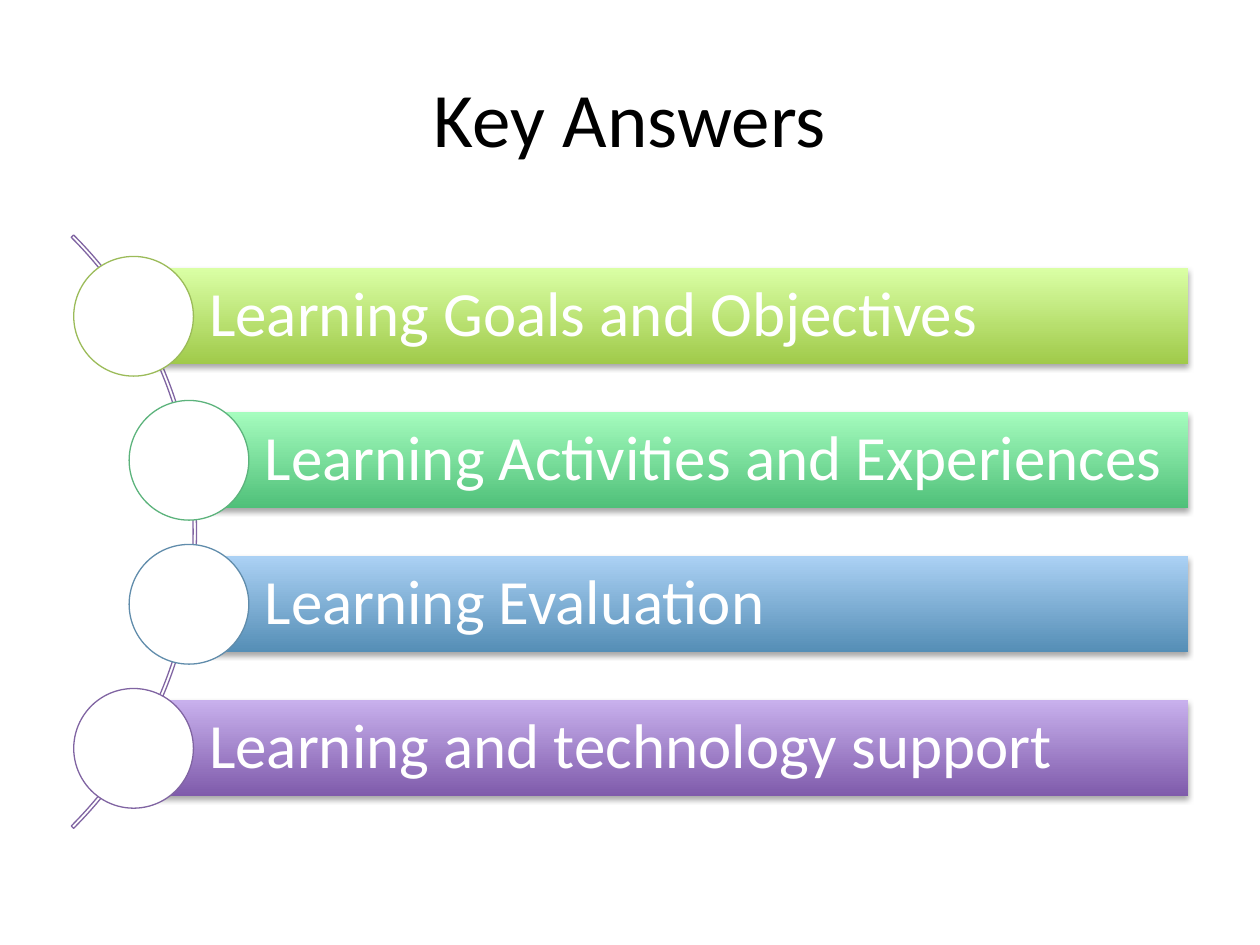
from lxml.etree import SubElement
from pptx import Presentation
from pptx.dml.color import RGBColor
from pptx.enum.shapes import MSO_SHAPE as Shape
from pptx.enum.text import MSO_ANCHOR as Anchor, PP_ALIGN as Align
from pptx.oxml.ns import qn
from pptx.util import Inches, Pt

ANSWERS = [
    ("Learning Goals and Objectives", 1.06, "A0CA4A", "DAFFA5", "9BBB59"),
    ("Learning Activities and Experiences", 1.5, "4FC079", "A5FCBE", "5CB37C"),
    ("Learning Evaluation", 1.5, "558EB6", "ABD1F4", "608CAB"),
    ("Learning and technology support", 1.06, "7F5BAB", "C8B0ED", "8064A2"),
]
FIRST_CENTER, ROW_STEP = 2.51, 1.143
BAR_RIGHT, BAR_HEIGHT = 9.43, 0.76
DOT_SIZE = 0.95
ARC_SIZE = 6.66
BAR_FRAME = {
    "word_wrap": True,
    "vertical_anchor": Anchor.MIDDLE,
    "margin_left": Inches(0.6),
    "margin_right": Inches(0.1),
    "margin_top": Inches(0.1),
    "margin_bottom": Inches(0.1),
}
TITLE_FRAME = {"word_wrap": True, "vertical_anchor": Anchor.MIDDLE}
SHADOW = {"blurRad": Pt(3.1), "dist": Pt(1.8), "dir": 90 * 60000, "rotWithShape": 0}


def color(hex_value):
    return RGBColor.from_string(hex_value)


def apply(target, values):
    for name, value in values.items():
        setattr(target, name, value)


def write(frame, text, size, ink, frame_format, paragraph_format):
    apply(frame, frame_format)
    paragraph = frame.paragraphs[0]
    apply(paragraph, paragraph_format)
    run = paragraph.add_run()
    run.text = text
    apply(run.font, {"name": "Calibri", "size": Pt(size)})
    run.font.color.rgb = color(ink)


def add_preset(slide, preset, left, top, width, height):
    preset_shape = slide.shapes.add_shape(
        preset, Inches(left), Inches(top), Inches(width), Inches(height))
    preset_shape.shadow.inherit = False
    return preset_shape


def outline(target, hex_value):
    target.line.color.rgb = color(hex_value)
    target.line.width = Pt(0.75)


def drop_shadow(target):
    effects = target._element.spPr.find(qn("a:effectLst"))
    shadow = SubElement(effects, qn("a:outerShdw"),
                        {name: str(int(value)) for name, value in SHADOW.items()})
    tint = SubElement(shadow, qn("a:srgbClr"), val="000000")
    SubElement(tint, qn("a:alpha"), val="35000")


def add_title(slide, text):
    title = slide.shapes.add_textbox(Inches(0.5), Inches(0.3), Inches(9), Inches(1.25))
    write(title.text_frame, text, 44, "000000", TITLE_FRAME, {"alignment": Align.CENTER})


def add_arc(slide):
    arc = add_preset(slide, Shape.BLOCK_ARC, -5.1, 0.89, ARC_SIZE, ARC_SIZE)
    for index, value in enumerate((189, 27, 0.004)):
        arc.adjustments[index] = value
    arc.fill.background()
    outline(arc, "8064A2")


def add_bar(slide, text, left, center, dark, light):
    bar = add_preset(slide, Shape.RECTANGLE, left, center - BAR_HEIGHT / 2,
                     BAR_RIGHT - left, BAR_HEIGHT)
    bar.fill.gradient()
    bar.fill.gradient_angle = 90
    for stop, shade in zip(bar.fill.gradient_stops, (dark, light)):
        stop.color.rgb = color(shade)
    bar.line.fill.background()
    drop_shadow(bar)
    write(bar.text_frame, text, 36, "FFFFFF", BAR_FRAME,
          {"alignment": Align.LEFT, "line_spacing": 0.9})


def add_dot(slide, middle, center, edge):
    dot = add_preset(slide, Shape.OVAL, middle - DOT_SIZE / 2, center - DOT_SIZE / 2,
                     DOT_SIZE, DOT_SIZE)
    dot.fill.solid()
    dot.fill.fore_color.rgb = color("FFFFFF")
    outline(dot, edge)


def main():
    deck = Presentation()
    apply(deck, {"slide_width": Inches(10), "slide_height": Inches(7.5)})
    slide = deck.slides.add_slide(deck.slide_layouts[6])
    add_title(slide, "Key Answers")
    add_arc(slide)
    for row, (text, left, dark, light, edge) in enumerate(ANSWERS):
        center = FIRST_CENTER + row * ROW_STEP
        add_bar(slide, text, left, center, dark, light)
        add_dot(slide, left, center, edge)
    deck.save("out.pptx")


if __name__ == "__main__":
    main()
